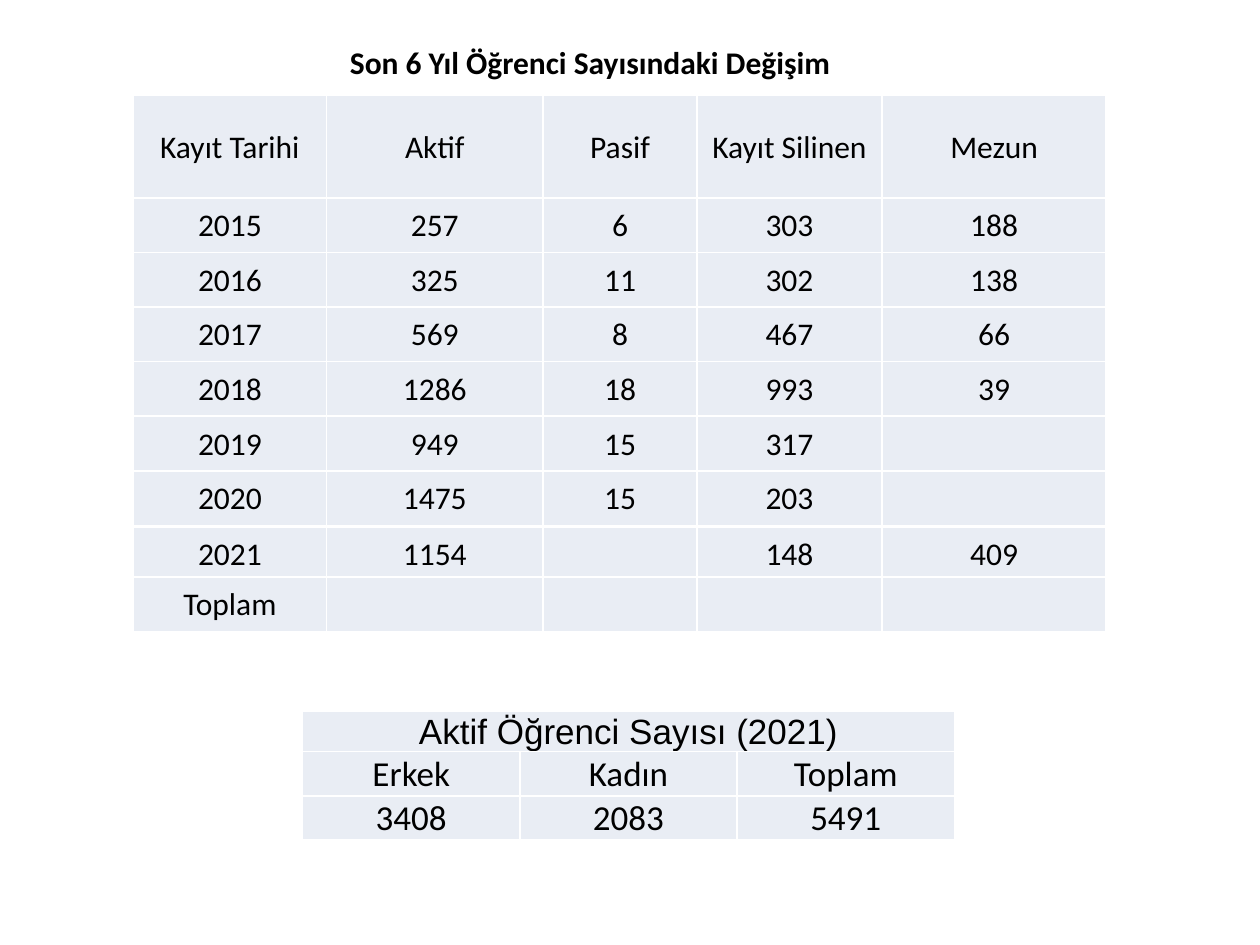
from lxml.etree import SubElement
from pptx import Presentation
from pptx.dml.color import RGBColor
from pptx.enum.text import MSO_ANCHOR, MSO_AUTO_SIZE, PP_ALIGN
from pptx.oxml.ns import qn
from pptx.util import Cm, Pt

"""Builds a slide of student counts by registration year and by gender."""

TITLE = "Son 6 Yıl Öğrenci Sayısındaki Değişim"
YEARS = [
    ["Kayıt Tarihi", "Aktif", "Pasif", "Kayıt Silinen", "Mezun"],
    ["2015", "257", "6", "303", "188"],
    ["2016", "325", "11", "302", "138"],
    ["2017", "569", "8", "467", "66"],
    ["2018", "1286", "18", "993", "39"],
    ["2019", "949", "15", "317", ""],
    ["2020", "1475", "15", "203", ""],
]
LATEST = [["2021", "1154", "", "148", "409"]]
TOTAL = [["Toplam", "", "", "", ""]]
GENDERS = [
    ["Aktif Öğrenci Sayısı (2021)", "", ""],
    ["Erkek", "Kadın", "Toplam"],
    ["3408", "2083", "5491"],
]

TEXT, CELL, BORDER = "000000", "E9EDF4", "FFFFFF"
YEAR_LEFT, YEAR_WIDTHS = 2.69, [3.89, 4.37, 3.1, 3.73, 4.52]
HEADER_HEIGHT, ROW_HEIGHT = 2.06, 1.1


def color(value):
    return RGBColor.from_string(value)


def add_span(para, text, size, font="Calibri", bold=False):
    para.alignment = PP_ALIGN.CENTER
    if text:
        span = para.add_run()
        span.text = text
        span.font.size = Pt(size)
        span.font.name = font
        span.font.bold = bold
        span.font.color.rgb = color(TEXT)


def style_cell(cell):
    cell.vertical_anchor = MSO_ANCHOR.MIDDLE
    cell.margin_left = cell.margin_right = cell.margin_top = Cm(0.03)
    cell.margin_bottom = Cm(0)
    properties = cell._tc.get_or_add_tcPr()
    for side in ("a:lnL", "a:lnR", "a:lnT", "a:lnB"):
        line = SubElement(properties, qn(side), w=str(Pt(1)))
        fill = SubElement(line, qn("a:solidFill"))
        SubElement(fill, qn("a:srgbClr"), val=BORDER)
    cell.fill.solid()
    cell.fill.fore_color.rgb = color(CELL)


def add_grid(page, rows, left, top, widths, heights, size, first_font="Calibri"):
    frame = page.shapes.add_table(
        len(rows), len(widths), Cm(left), Cm(top), Cm(sum(widths)), Cm(sum(heights))
    )
    table = frame.table
    table.first_row = table.horz_banding = False
    for column, width in zip(table.columns, widths):
        column.width = Cm(width)
    for index, (values, height) in enumerate(zip(rows, heights)):
        table.rows[index].height = Cm(height)
        font = "Calibri" if index else first_font
        for position, value in enumerate(values):
            cell = table.cell(index, position)
            style_cell(cell)
            add_span(cell.text_frame.paragraphs[0], value, size, font)
    return table


def add_title(page):
    box = page.shapes.add_textbox(Cm(4.9), Cm(0.74), Cm(14), Cm(1.02))
    box.text_frame.word_wrap = True
    box.text_frame.auto_size = MSO_AUTO_SIZE.SHAPE_TO_FIT_TEXT
    add_span(box.text_frame.paragraphs[0], TITLE, 18, bold=True)


def main():
    deck = Presentation()
    deck.slide_width, deck.slide_height = Cm(25.4), Cm(19.05)
    page = deck.slides.add_slide(deck.slide_layouts[6])

    genders = add_grid(page, GENDERS, 6.1, 14.33, [4.38] * 3, [0.81, 0.89, 0.89], 20, "Arial")
    genders.cell(0, 0).merge(genders.cell(0, 2))

    year_heights = [HEADER_HEIGHT] + [ROW_HEIGHT] * (len(YEARS) - 1)
    add_grid(page, YEARS, YEAR_LEFT, 1.93, YEAR_WIDTHS, year_heights, 18)
    add_title(page)
    for rows, top in ((LATEST, 10.62), (TOTAL, 11.63)):
        add_grid(page, rows, YEAR_LEFT, top, YEAR_WIDTHS, [ROW_HEIGHT], 18)

    deck.save("out.pptx")


if __name__ == "__main__":
    main()
